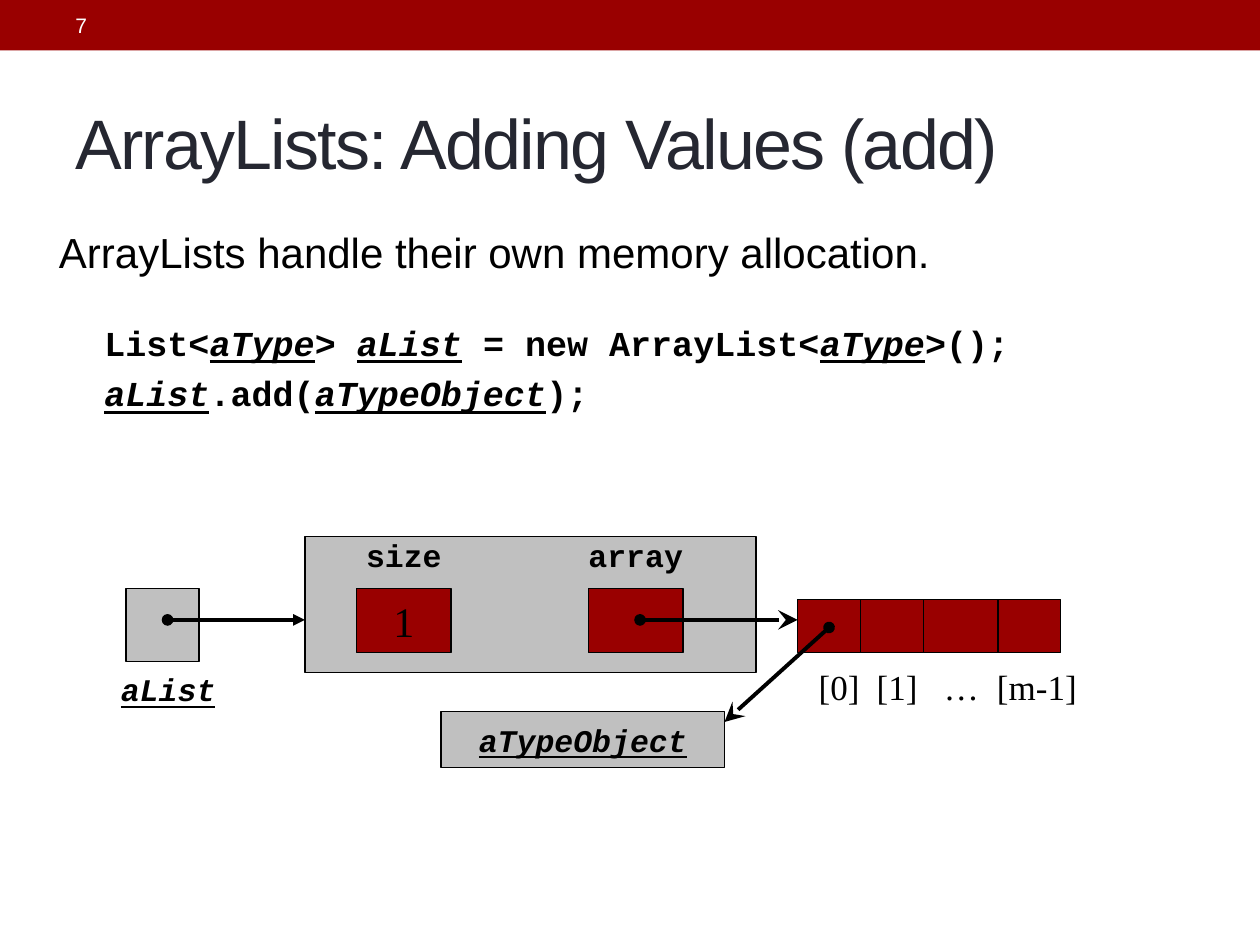
from dataclasses import dataclass
from itertools import pairwise

from lxml.etree import SubElement
from pptx import Presentation
from pptx.dml.color import RGBColor
from pptx.enum.shapes import MSO_CONNECTOR as Connector, MSO_SHAPE as Shape
from pptx.enum.text import MSO_ANCHOR as Anchor, PP_ALIGN as Align
from pptx.oxml.ns import qn
from pptx.util import Inches, Pt


@dataclass(frozen=True)
class Theme:
    """Colours, fonts and type sizes of the slide."""
    red: str = "990000"
    gray: str = "C0C0C0"
    black: str = "000000"
    white: str = "FFFFFF"
    ink: str = "252731"
    sans: str = "Arial"
    mono: str = "Courier New"
    serif: str = "Times New Roman"
    number: int = 12
    title: int = 40
    body: int = 24
    code: int = 20
    label: int = 18
    thin: float = 0.75
    thick: float = 2.25


THEME = Theme()


def add_run(paragraph, text, font, size, color=THEME.black, bold=False, emphasis=False):
    """Append one styled run; emphasis means italic and underlined."""
    run = paragraph.add_run()
    run.text = text
    run.font.name = font
    run.font.size = Pt(size)
    run.font.color.rgb = RGBColor.from_string(color)
    run.font.bold = bold
    run.font.italic = emphasis
    run.font.underline = emphasis
    return run


def add_text_box(slide, left, top, width, height, anchor=Anchor.TOP):
    """Add a wrapping text box and return its text frame."""
    box = slide.shapes.add_textbox(Inches(left), Inches(top), Inches(width), Inches(height))
    box.text_frame.word_wrap = True
    box.text_frame.vertical_anchor = anchor
    return box.text_frame


def add_box(slide, left, top, width, height, fill, outlined=True):
    """Add a flat rectangle and return its text frame."""
    shape = slide.shapes.add_shape(
        Shape.RECTANGLE, Inches(left), Inches(top), Inches(width), Inches(height))
    shape.shadow.inherit = False
    shape.fill.solid()
    shape.fill.fore_color.rgb = RGBColor.from_string(fill)
    if outlined:
        shape.line.color.rgb = RGBColor.from_string(THEME.black)
        shape.line.width = Pt(THEME.thin)
    else:
        shape.line.fill.background()
    shape.text_frame.vertical_anchor = Anchor.MIDDLE
    return shape.text_frame


def write_label(frame, text, font, size, **style):
    """Write one centred line into a text frame."""
    paragraph = frame.paragraphs[0]
    paragraph.alignment = Align.CENTER
    paragraph.space_before = Pt(4)
    add_run(paragraph, text, font, size, **style)


def add_pointer(slide, start, end, tip, tip_size):
    """Add a reference arrow with a dot at its start."""
    arrow = slide.shapes.add_connector(Connector.STRAIGHT, *map(Inches, start + end))
    arrow.line.color.rgb = RGBColor.from_string(THEME.black)
    arrow.line.width = Pt(THEME.thick)
    line = arrow.line._get_or_add_ln()
    SubElement(line, qn("a:headEnd"), type="oval")
    SubElement(line, qn("a:tailEnd"), type=tip, w=tip_size, len=tip_size)
    SubElement(arrow._element.spPr, qn("a:effectLst"))


def add_header(slide, left, top, width, height):
    """Draw the top band with the slide number."""
    add_box(slide, left, top, width, height, THEME.red, outlined=False)
    frame = add_text_box(slide, left + 0.5, top + 0.02, 3.17, height - 0.04, Anchor.MIDDLE)
    add_run(frame.paragraphs[0], "7", THEME.sans, THEME.number, THEME.white)


def add_title(slide, left, top, width, height):
    """Write the slide title with tightened letters."""
    frame = add_text_box(slide, left, top, width, height, Anchor.MIDDLE)
    run = add_run(frame.paragraphs[0], "ArrayLists: Adding Values (add)",
                  THEME.sans, THEME.title, THEME.ink)
    run.font._element.set("spc", "-100")


def add_statement(slide, left, top, width, height):
    """Write the sentence under the title."""
    paragraph = add_text_box(slide, left, top, width, height).paragraphs[0]
    paragraph.space_before = Pt(4)
    add_run(paragraph, "ArrayLists handle their own memory allocation.",
            THEME.sans, THEME.body)


def add_code(slide, left, top, width, height):
    """Write the code lines, with the names to fill in emphasised."""
    lines = (
        (("List<", False), ("aType", True), ("> ", False), ("aList", True),
         (" = new ArrayList<", False), ("aType", True), (">();", False)),
        (("aList", True), (".add(", False), ("aTypeObject", True), (");", False)),
    )
    frame = add_text_box(slide, left, top, width, height)
    for index, parts in enumerate(lines):
        paragraph = frame.add_paragraph() if index else frame.paragraphs[0]
        paragraph.space_before = Pt(5)
        for text, emphasis in parts:
            add_run(paragraph, text, THEME.mono, THEME.code, bold=True, emphasis=emphasis)


def add_variable(slide, left, top, side):
    """Draw the list variable and its name."""
    add_box(slide, left, top, side, side, THEME.gray)
    label = add_text_box(slide, left - 0.54, top + side + 0.02, 1.75, 0.4, Anchor.MIDDLE)
    write_label(label, "aList", THEME.mono, THEME.label, bold=True, emphasis=True)


def add_list_object(slide, left, top, width, height):
    """Draw the list object with its two named fields."""
    add_box(slide, left, top, width, height, THEME.gray)
    for name, value, offset in (("size", "1", 0.41), ("array", "", 2.25)):
        label = add_text_box(slide, left + offset - 0.25, top - 0.07, 1.25, 0.43, Anchor.MIDDLE)
        write_label(label, name, THEME.mono, THEME.label, bold=True)
        field = add_box(slide, left + offset, top + 0.41, 0.75, 0.51, THEME.red)
        if value:
            write_label(field, value, THEME.serif, THEME.body)


def add_array(slide, left, top, height):
    """Draw the array cells with their indexes below."""
    for start, end in pairwise((0, 0.5, 1, 1.59, 2.09)):
        add_box(slide, left + start, top, end - start, height, THEME.red)
    for text, center, width in (
        ("[0]", 0.33, 0.6), ("[1]", 0.79, 0.6), ("…", 1.3, 0.6), ("[m-1]", 1.9, 1),
    ):
        label = add_text_box(slide, left + center - width / 2, top + height + 0.05,
                             width, 0.43, Anchor.MIDDLE)
        write_label(label, text, THEME.serif, THEME.code)


def add_element(slide, left, top, width, height):
    """Draw the object stored in the array."""
    write_label(add_box(slide, left, top, width, height, THEME.gray),
                "aTypeObject", THEME.mono, THEME.label, bold=True, emphasis=True)


def add_memory_diagram(slide, left, top):
    """Draw the variable, list, array and element with their references."""
    add_variable(slide, left, top + 0.41, 0.58)
    add_list_object(slide, left + 1.42, top, 3.58, 1.08)
    add_array(slide, left + 5.33, top + 0.5, 0.42)
    add_element(slide, left + 2.5, top + 1.39, 2.25, 0.44)
    for start, end, tip, tip_size in (
        ((0.33, 0.66), (1.42, 0.66), "triangle", "med"),
        ((5.58, 0.72), (4.75, 1.47), "stealth", "lg"),
        ((4.08, 0.66), (5.33, 0.66), "stealth", "lg"),
    ):
        add_pointer(slide, (left + start[0], top + start[1]),
                    (left + end[0], top + end[1]), tip, tip_size)


def main():
    """Build the slide and save it."""
    presentation = Presentation()
    presentation.slide_width = Inches(10)
    presentation.slide_height = Inches(7.5)
    slide = presentation.slides.add_slide(presentation.slide_layouts[6])
    add_header(slide, 0, 0, 10, 0.4)
    add_title(slide, 0.5, 0.58, 9, 1.08)
    add_statement(slide, 0.37, 1.75, 9.63, 0.6)
    add_code(slide, 0.73, 2.5, 9.1, 1.25)
    add_memory_diagram(slide, 1, 4.26)
    presentation.save("out.pptx")


if __name__ == "__main__":
    main()
